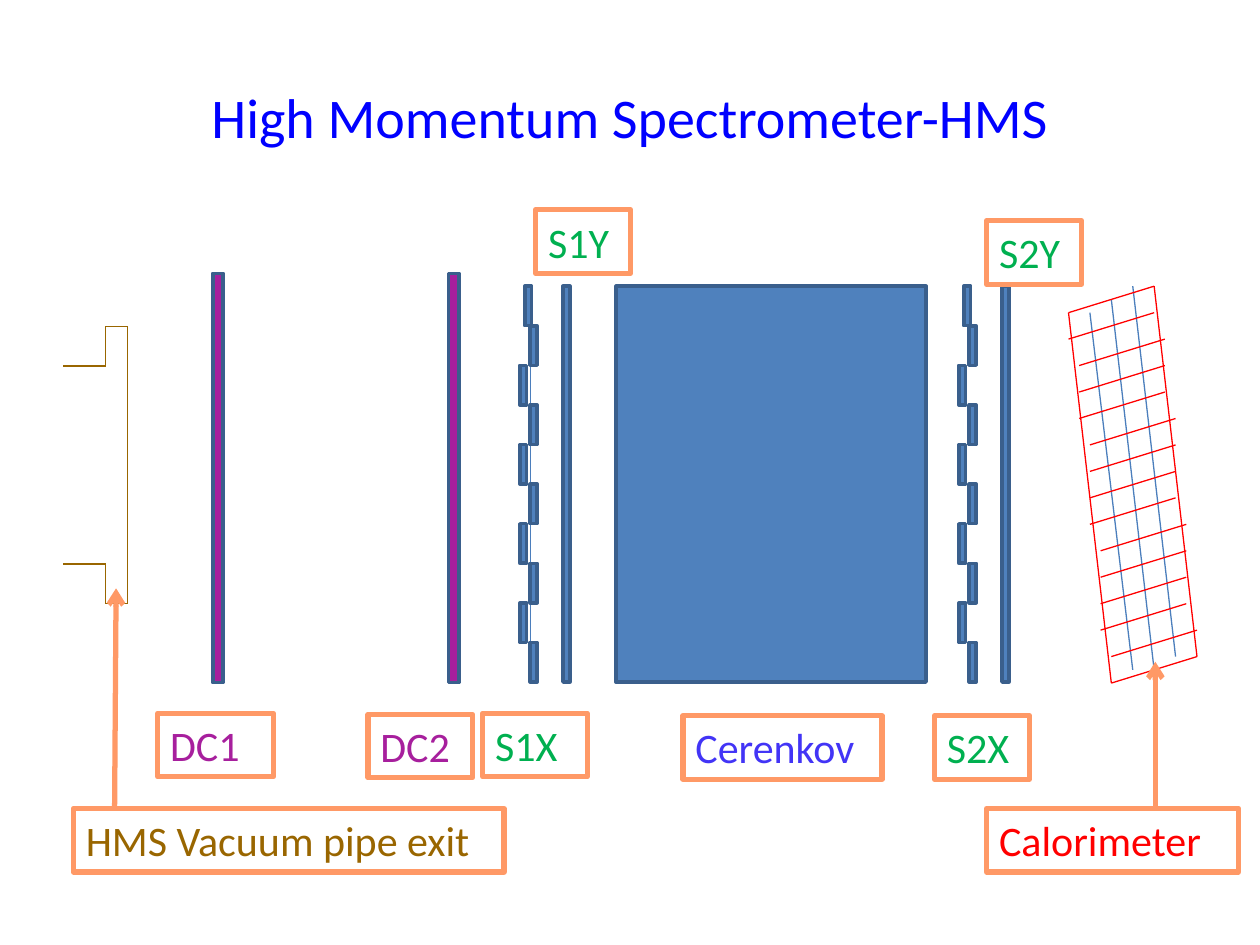
from itertools import pairwise

from lxml import etree
from pptx import Presentation
from pptx.dml.color import RGBColor
from pptx.enum.shapes import MSO_CONNECTOR, MSO_SHAPE
from pptx.enum.text import MSO_ANCHOR, MSO_AUTO_SIZE, PP_ALIGN
from pptx.oxml.ns import qn
from pptx.util import Cm, Pt

RECT = MSO_SHAPE.RECTANGLE
LINE = MSO_CONNECTOR.STRAIGHT
MIDDLE = MSO_ANCHOR.MIDDLE
TOP = MSO_ANCHOR.TOP
LEFT = PP_ALIGN.LEFT
CENTER = PP_ALIGN.CENTER
GROW = MSO_AUTO_SIZE.SHAPE_TO_FIT_TEXT

BLUE, EDGE, WIRE = "4F81BD", "3A5F8C", "4B7EBC"
PURPLE, GREEN, RED, BROWN = "A71F9D", "00B050", "FF0000", "996600"
VIOLET, ORANGE, TITLE = "4234F6", "FF9966", "0000FF"


def paint(target, color):
    """Give a fill or line format a solid hex colour."""
    target.solid()
    target.fore_color.rgb = RGBColor.from_string(color)


def write(frame, text, size, color, align):
    """Put one styled run into a text frame."""
    para = frame.paragraphs[0]
    para.alignment = align
    run = para.add_run()
    run.text = text
    run.font.name = "Calibri"
    run.font.size = Pt(size)
    run.font.color.rgb = RGBColor.from_string(color)


def draw_line(shapes, start, end, color, width=0.75, arrow=False):
    """Draw a straight line between two points in centimetres."""
    line = shapes.add_connector(LINE, *map(Cm, (*start, *end)))
    paint(line.line.fill, color)
    line.line.width = Pt(width)
    if arrow:
        etree.SubElement(line.line._get_or_add_ln(), qn("a:tailEnd"), type="arrow")
    etree.SubElement(line._element.spPr, qn("a:effectLst"))


def draw_box(shapes, x, y, w, h, fill, edge=EDGE, width=2):
    """Draw an outlined rectangle, hollow when fill is None."""
    box = shapes.add_shape(RECT, *map(Cm, (x, y, w, h)))
    box.shadow.inherit = False
    if fill:
        paint(box.fill, fill)
    else:
        box.fill.background()
    paint(box.line.fill, edge)
    box.line.width = Pt(width)
    return box


def add_title(slide, x, y, w, h):
    """Place and format the title placeholder."""
    title = slide.shapes.title
    title.left, title.top, title.width, title.height = map(Cm, (x, y, w, h))
    title.text_frame.vertical_anchor = MIDDLE
    write(title.text_frame, "High Momentum Spectrometer-HMS", 32, TITLE, CENTER)


def add_pipe(slide, x, y, w, h):
    """Draw the stepped end of the vacuum pipe."""
    shapes = slide.shapes.add_group_shape().shapes
    neck, step = x + 0.86, 0.8
    points = [
        (x, y + step), (neck, y + step), (neck, y), (x + w, y),
        (x + w, y + h), (neck, y + h), (neck, y + h - step), (x, y + h - step),
    ]
    for start, end in pairwise(points):
        draw_line(shapes, start, end, BROWN)


def add_hodoscope(slide, x, y, w, h, axis):
    """Draw a staggered X plane of ten paddles and a Y plane at the right."""
    shapes = slide.shapes.add_group_shape().shapes
    bar, shift, count = 0.14, 0.21, 10
    pitch = h / count
    if axis:
        draw_line(shapes, (x + shift, y + 0.27), (x + shift, y + h), WIRE)
    for i in range(count):
        offset = 0.1 if i == 0 else i % 2 * shift
        draw_box(shapes, x + offset, y + i * pitch, bar, pitch, BLUE)
    draw_box(shapes, x + w - bar, y, bar, h, BLUE)


def add_calorimeter(slide, x, y, w, h):
    """Draw the slanted block grid on 12 columns by 15 rows."""
    shapes = slide.shapes.add_group_shape().shapes

    def spot(col, row):
        """Turn grid units into a point."""
        return x + col * w / 12, y + row * h / 15

    for col, top, end in ((2, 1, 14.5), (4, 0.5, 14.5), (6, 0, 14)):
        draw_line(shapes, spot(col, top), spot(col + 4, end), WIRE)
    for col, row in ((0, 1), (8, 0)):
        draw_line(shapes, spot(col, row), spot(col + 4, row + 14), RED)
    row = 1
    for col, count in enumerate((2, 3, 4, 4, 2)):
        for _ in range(count):
            draw_line(shapes, spot(col, row), spot(col + 8, row - 1), RED)
            row += 1


def add_label(slide, x, y, w, h, text, color):
    """Add a framed detector name."""
    box = draw_box(slide.shapes, x, y, w, h, None, ORANGE, 3)
    frame = box.text_frame
    frame.word_wrap = True
    frame.auto_size = GROW
    frame.vertical_anchor = TOP
    write(frame, text, 24, color, LEFT)


def main():
    """Build the spectrometer slide."""
    deck = Presentation()
    deck.slide_width, deck.slide_height = Cm(25.4), Cm(19.05)
    slide = deck.slides.add_slide(deck.slide_layouts[5])
    top, tall = 5.77, 7.98

    add_title(slide, 1.27, 0.76, 22.86, 3.18)
    add_pipe(slide, 1.27, 6.58, 1.3, 5.59)
    for x in (4.29, 9.04):
        draw_box(slide.shapes, x, 5.51, 0.21, 8.25, PURPLE)
    add_hodoscope(slide, 10.48, top, 1.01, tall, True)
    draw_box(slide.shapes, 12.42, top, 6.25, tall, BLUE)
    add_hodoscope(slide, 19.33, top, 1.01, tall, False)
    add_calorimeter(slide, 21.54, top, 2.59, 8)

    labels = [
        ("DC1", PURPLE, 3.18, 14.38, 2.34),
        ("DC2", PURPLE, 7.42, 14.4, 2.11),
        ("Cerenkov", VIOLET, 13.77, 14.43, 4.01),
        ("S1X", GREEN, 9.73, 14.38, 2.11),
        ("S1Y", GREEN, 10.8, 4.23, 1.91),
        ("S2Y", GREEN, 19.89, 4.45, 1.91),
        ("S2X", GREEN, 18.84, 14.43, 1.91),
        ("Calorimeter", RED, 19.89, 16.3, 5.08),
        ("HMS Vacuum pipe exit", BROWN, 1.48, 16.3, 8.68),
    ]
    for text, color, x, y, w in labels:
        add_label(slide, x, y, w, 1.28, text, color)
    for start, end in (((2.31, 16.3), (2.34, 11.86)), ((23.29, 16.3), (23.29, 13.34))):
        draw_line(slide.shapes, start, end, ORANGE, 3, True)

    deck.save("out.pptx")


if __name__ == "__main__":
    main()
